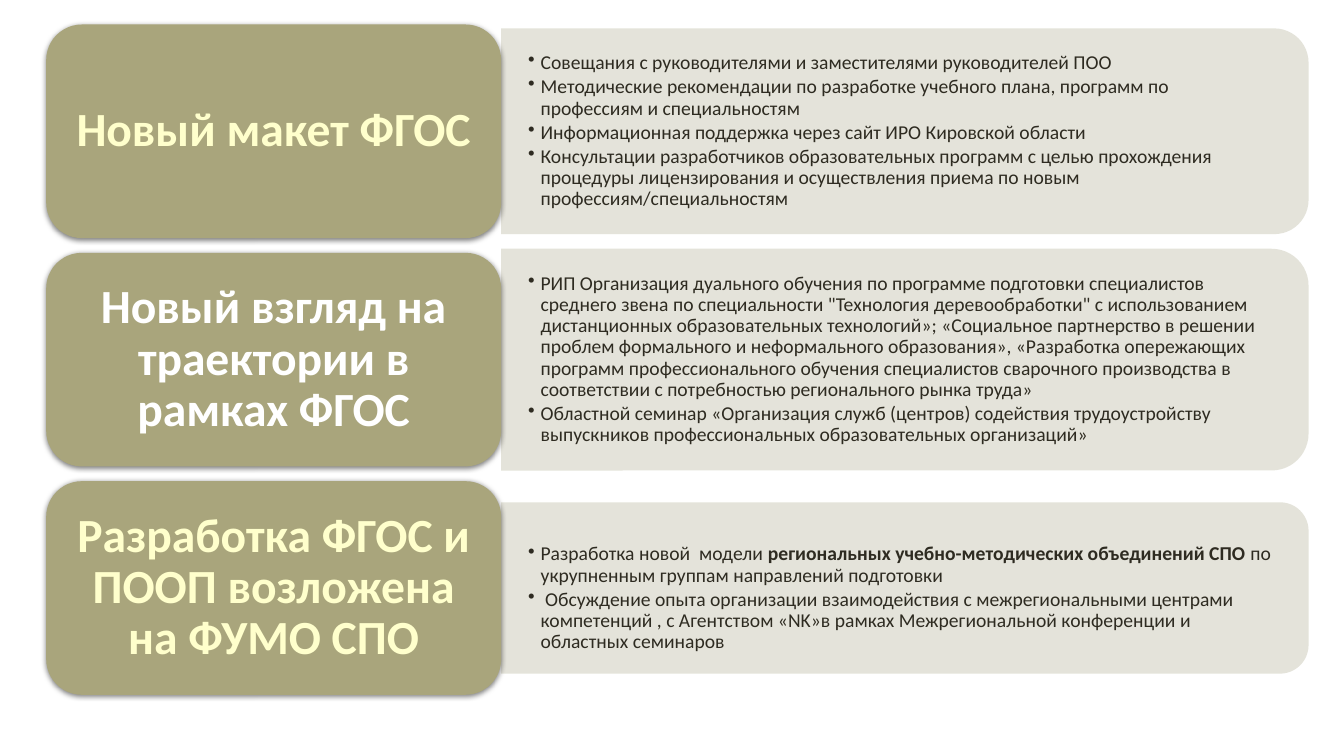
"""Builds a slide of three FGOS topics, each with a panel of supporting measures."""
from dataclasses import dataclass

from lxml import etree
from pptx import Presentation
from pptx.dml.color import RGBColor
from pptx.enum.shapes import MSO_SHAPE as Preset
from pptx.enum.text import MSO_ANCHOR as Anchor, PP_ALIGN as Align
from pptx.oxml.ns import qn
from pptx.util import Pt


@dataclass(frozen=True)
class Theme:
    font: str = "Calibri"
    topic_size: float = 34
    measure_size: float = 14
    topic_fill: str = "A9A57C"
    panel_fill: str = "E2E1D7"
    cream: str = "FFFFCC"
    white: str = "FFFFFF"
    ink: str = "2E2B21"
    shadow: str = "000000"


theme = Theme()


def add_plate(preset, left, top, width, height, color):
    plate = slide.shapes.add_shape(preset, Pt(left), Pt(top), Pt(width), Pt(height))
    plate.shadow.inherit = False
    plate.fill.solid()
    plate.fill.fore_color.rgb = RGBColor.from_string(color)
    plate.line.fill.background()
    return plate


def add_run(paragraph, wording, size, color, bold):
    run = paragraph.add_run()
    run.text = wording
    run.font.name = theme.font
    run.font.size = Pt(size)
    run.font.bold = bold
    run.font.color.rgb = RGBColor.from_string(color)


topics = [
    ("Новый макет ФГОС", theme.cream, 147, 10, [
        [("Совещания с руководителями и заместителями руководителей ПОО", False)],
        [("Методические рекомендации по разработке учебного плана, программ по "
          "профессиям и специальностям", False)],
        [("Информационная поддержка через сайт ИРО Кировской области", False)],
        [("Консультации разработчиков образовательных программ с целью прохождения "
          "процедуры лицензирования и осуществления приема по новым "
          "профессиям/специальностям", False)],
    ]),
    ("Новый взгляд на траектории в рамках ФГОС", theme.white, 158.4, 10, [
        [("РИП Организация дуального обучения по программе подготовки специалистов "
          "среднего звена по специальности \"Технология деревообработки\" с использованием "
          "дистанционных образовательных технологий»; «Социальное партнерство в решении "
          "проблем формального и неформального образования», «Разработка опережающих "
          "программ профессионального обучения специалистов сварочного производства в "
          "соответствии с потребностью регионального рынка труда»", False)],
        [("Областной семинар «Организация служб (центров) содействия трудоустройству "
          "выпускников профессиональных образовательных организаций»", False)],
    ]),
    ("Разработка ФГОС и ПООП возложена на ФУМО СПО", theme.cream, 122.4, 25, [
        [("Разработка новой  модели ", False),
         ("региональных учебно-методических объединений СПО ", True),
         ("по укрупненным группам направлений подготовки", False)],
        [(" Обсуждение опыта организации взаимодействия с межрегиональными центрами "
          "компетенций , с Агентством «NK»в рамках Межрегиональной конференции и "
          "областных семинаров", False)],
    ]),
]

topic_left, topic_width, topic_height = 33, 325, 152.6
first_center, row_pitch = 93.8, 163.1
panel_left, panel_width, measures_width = 358, 576.7, 570

deck = Presentation()
deck.slide_width, deck.slide_height = Pt(960), Pt(540)
slide = deck.slides.add_slide(deck.slide_layouts[6])

for row, (topic, topic_color, panel_height, top_inset, measures) in enumerate(topics):
    center = first_center + row * row_pitch

    panel = add_plate(Preset.ROUND_2_SAME_RECTANGLE,
                      panel_left + (panel_width - panel_height) / 2,
                      center - panel_width / 2,
                      panel_height, panel_width, theme.panel_fill)
    panel.rotation = 90
    panel_color = panel.fill._xPr.find(qn("a:solidFill"))[0]
    etree.SubElement(panel_color, qn("a:alpha"), val="90000")

    measures_height = panel_height * 0.9
    measure_list = slide.shapes.add_textbox(
        Pt(panel_left), Pt(center - measures_height / 2),
        Pt(measures_width), Pt(measures_height)).text_frame
    measure_list.word_wrap = True
    measure_list.vertical_anchor = Anchor.MIDDLE
    measure_list.margin_left = measure_list.margin_right = Pt(19.2)
    measure_list.margin_top, measure_list.margin_bottom = Pt(top_inset), Pt(10)
    for position, measure in enumerate(measures):
        item = measure_list.add_paragraph() if position else measure_list.paragraphs[0]
        item.level = 1
        item.line_spacing = 0.9
        item.space_after = Pt(2.1)
        item_format = item._p.get_or_add_pPr()
        item_format.set("marL", str(Pt(9)))
        item_format.set("indent", str(-Pt(9)))
        etree.SubElement(item_format, qn("a:buChar"), char="•")
        for wording, bold in measure:
            add_run(item, wording, theme.measure_size, theme.ink, bold)

    topic_card = add_plate(Preset.ROUNDED_RECTANGLE, topic_left, center - topic_height / 2,
                           topic_width, topic_height, theme.topic_fill)
    effects = topic_card._element.spPr.find(qn("a:effectLst"))
    card_shadow = etree.SubElement(effects, qn("a:outerShdw"), blurRad=str(Pt(4)),
                                   dist=str(Pt(1)), dir="5400000", rotWithShape="0")
    shadow_color = etree.SubElement(card_shadow, qn("a:srgbClr"), val=theme.shadow)
    etree.SubElement(shadow_color, qn("a:alpha"), val="50000")

    heading = topic_card.text_frame
    heading.word_wrap = True
    heading.vertical_anchor = Anchor.MIDDLE
    heading.margin_left = heading.margin_right = Pt(10)
    heading.margin_top = heading.margin_bottom = Pt(5)
    heading_line = heading.paragraphs[0]
    heading_line.alignment = Align.CENTER
    heading_line.line_spacing = 0.9
    add_run(heading_line, topic, theme.topic_size, topic_color, True)

deck.save("out.pptx")
